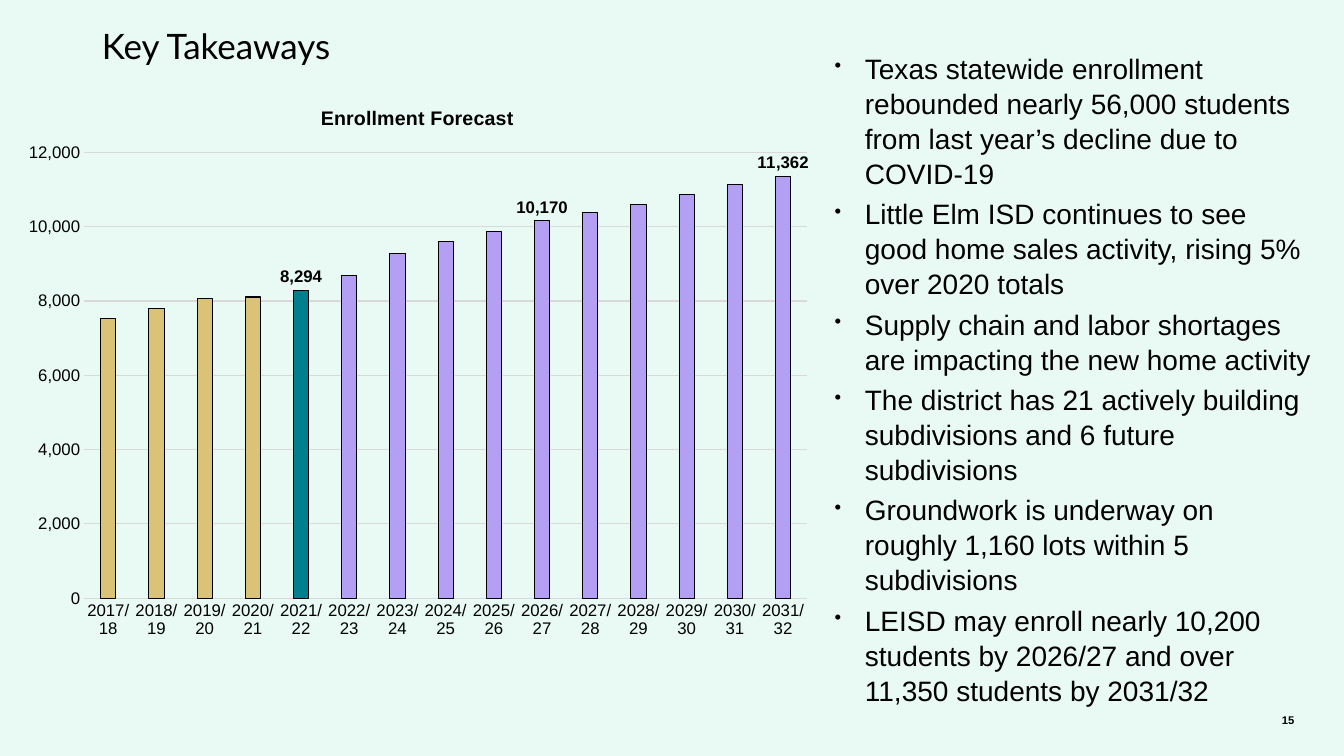
from dataclasses import dataclass

from lxml import etree
from pptx import Presentation
from pptx.chart.data import CategoryChartData
from pptx.dml.color import RGBColor
from pptx.enum.chart import XL_CHART_TYPE, XL_LABEL_POSITION, XL_TICK_MARK
from pptx.enum.text import MSO_ANCHOR, PP_ALIGN
from pptx.oxml import parse_xml
from pptx.oxml.ns import nsdecls, qn
from pptx.util import Inches, Pt

COLUMNS = XL_CHART_TYPE.COLUMN_CLUSTERED
LABEL_ABOVE = XL_LABEL_POSITION.OUTSIDE_END
NO_TICKS = XL_TICK_MARK.NONE
TOP, MIDDLE = MSO_ANCHOR.TOP, MSO_ANCHOR.MIDDLE
RIGHT = PP_ALIGN.RIGHT


@dataclass(frozen=True)
class Theme:
    background = RGBColor.from_string("E9FAF4")
    ink = RGBColor.from_string("000000")
    rule = RGBColor.from_string("D9D9D9")
    history = RGBColor.from_string("DAC377")
    current = RGBColor.from_string("00808D")
    forecast = RGBColor.from_string("B3A0F5")
    heading_font = "Lato"
    body_font = "Arial"
    heading = Pt(25)
    body = Pt(20)
    chart_title = Pt(14)
    chart_text = Pt(12)
    page_number = Pt(8)
    hairline = Pt(0.75)


theme = Theme()
FIRST_YEAR, CURRENT_YEAR = 2017, 2021
LABELED_YEARS = (2021, 2026, 2031)
ENROLLMENT = [7526, 7787, 8065, 8108, 8294, 8689, 9268, 9597,
              9872, 10170, 10372, 10589, 10878, 11126, 11362]
TAKEAWAYS = [
    "Texas statewide enrollment rebounded nearly 56,000 students from last year’s decline due to COVID-19",
    "Little Elm ISD continues to see good home sales activity, rising 5% over 2020 totals",
    "Supply chain and labor shortages are impacting the new home activity",
    "The district has 21 actively building subdivisions and 6 future subdivisions",
    "Groundwork is underway on roughly 1,160 lots within 5 subdivisions",
    "LEISD may enroll nearly 10,200 students by 2026/27 and over 11,350 students by 2031/32",
]

deck = Presentation()
deck.slide_width, deck.slide_height = Inches(13.33), Inches(7.5)
slide = deck.slides.add_slide(deck.slide_layouts[6])
slide.background.fill.solid()
slide.background.fill.fore_color.rgb = theme.background


def cells(left, top, width, height):
    """Turn places on a grid of 40 columns and 30 rows into lengths."""
    column, row = deck.slide_width / 40, deck.slide_height / 30
    return [round(n) for n in (left * column, top * row, width * column, height * row)]


def add_text(place, lines, size, font_name, anchor, inset=0, bulleted=False):
    frame = slide.shapes.add_textbox(*place).text_frame
    frame.word_wrap = True
    frame.vertical_anchor = anchor
    frame.margin_left = frame.margin_right = inset
    frame.margin_top = frame.margin_bottom = inset // 2
    frame.text = "\n".join(lines)
    for paragraph in frame.paragraphs:
        if bulleted:
            paragraph.line_spacing = 1.04
            paragraph.space_after = Pt(4)
            properties = paragraph._p.get_or_add_pPr()
            properties.set("marL", str(Inches(0.3)))
            properties.set("indent", str(-Inches(0.3)))
            etree.SubElement(properties, qn("a:buSzPct")).set("val", "70000")
            etree.SubElement(properties, qn("a:buChar")).set("char", "•")
        paragraph.font.size = size
        paragraph.font.name = font_name
        paragraph.font.color.rgb = theme.ink
    return frame


page_number = add_text(cells(29.82, 27.76, 9, 1.6), ["15"], theme.page_number,
                       theme.body_font, MIDDLE, inset=Inches(0.1))
page_number.paragraphs[0].alignment = RIGHT
page_number.paragraphs[0].font.bold = True
add_text(cells(3.03, 0.96, 19.5, 2), ["Key Takeaways"], theme.heading,
         theme.heading_font, TOP)
add_text(cells(24.84, 5.52, 14.22, 19), TAKEAWAYS, theme.body,
         theme.body_font, MIDDLE, bulleted=True)

# Enrollment chart
enrollment_data = CategoryChartData(number_format="#,##0")
enrollment_data.categories = [f"{year}/{year % 100 + 1}" for year in
                              range(FIRST_YEAR, FIRST_YEAR + len(ENROLLMENT))]
enrollment_data.add_series("Series 1", ENROLLMENT)
chart = slide.shapes.add_chart(COLUMNS, *cells(0.33, 3.36, 24.18, 22.4),
                               enrollment_data).chart
chart.has_legend = False
chart.font.size = theme.chart_text
chart.font.name = theme.body_font
chart.font.color.rgb = theme.ink

chart.has_title = True
chart.chart_title.include_in_layout = False
chart.chart_title.text_frame.text = "Enrollment Forecast"
title_font = chart.chart_title.text_frame.paragraphs[0].font
title_font.size = theme.chart_title
title_font.name = theme.body_font
title_font.bold = True
title_font.color.rgb = theme.ink

plot_area = chart._chartSpace.chart.plotArea
for layout in plot_area.findall(qn("c:layout")):
    plot_area.remove(layout)
plot_area.insert(0, parse_xml(
    f'<c:layout {nsdecls("c")}><c:manualLayout><c:layoutTarget val="inner"/>'
    '<c:xMode val="edge"/><c:yMode val="edge"/><c:x val="0.09"/><c:y val="0.12"/>'
    '<c:w val="0.89"/><c:h val="0.79"/></c:manualLayout></c:layout>'))

years, students = chart.category_axis, chart.value_axis
for axis in (years, students):
    axis.major_tick_mark = axis.minor_tick_mark = NO_TICKS
students.minimum_scale, students.maximum_scale, students.major_unit = 0, 12000, 2000
students.tick_labels.number_format = "#,##0"
students.tick_labels.number_format_is_linked = False
students.format.line.fill.background()
for line in (years.format.line, students.major_gridlines.format.line):
    line.color.rgb = theme.rule
    line.width = theme.hairline

plot = chart.plots[0]
plot.gap_width, plot.overlap = 219, -27
plot.vary_by_categories = False
enrollment = plot.series[0]
enrollment.data_labels.show_value = False

past_bars = [enrollment.points[i] for i in range(CURRENT_YEAR - FIRST_YEAR)]
current_bar = enrollment.points[CURRENT_YEAR - FIRST_YEAR]
bar_colors = [(enrollment, theme.forecast), (current_bar, theme.current)]
bar_colors += [(bar, theme.history) for bar in past_bars]
for bar, color in bar_colors:
    bar.format.fill.solid()
    bar.format.fill.fore_color.rgb = color
    bar.format.line.color.rgb = theme.ink
    bar.format.line.width = theme.hairline

for year in LABELED_YEARS:
    label = enrollment.points[year - FIRST_YEAR].data_label
    label.position = LABEL_ABOVE
    label.font.size = theme.chart_text
    label.font.name = theme.body_font
    label.font.bold = True
    label.font.color.rgb = theme.ink

deck.save("out.pptx")
